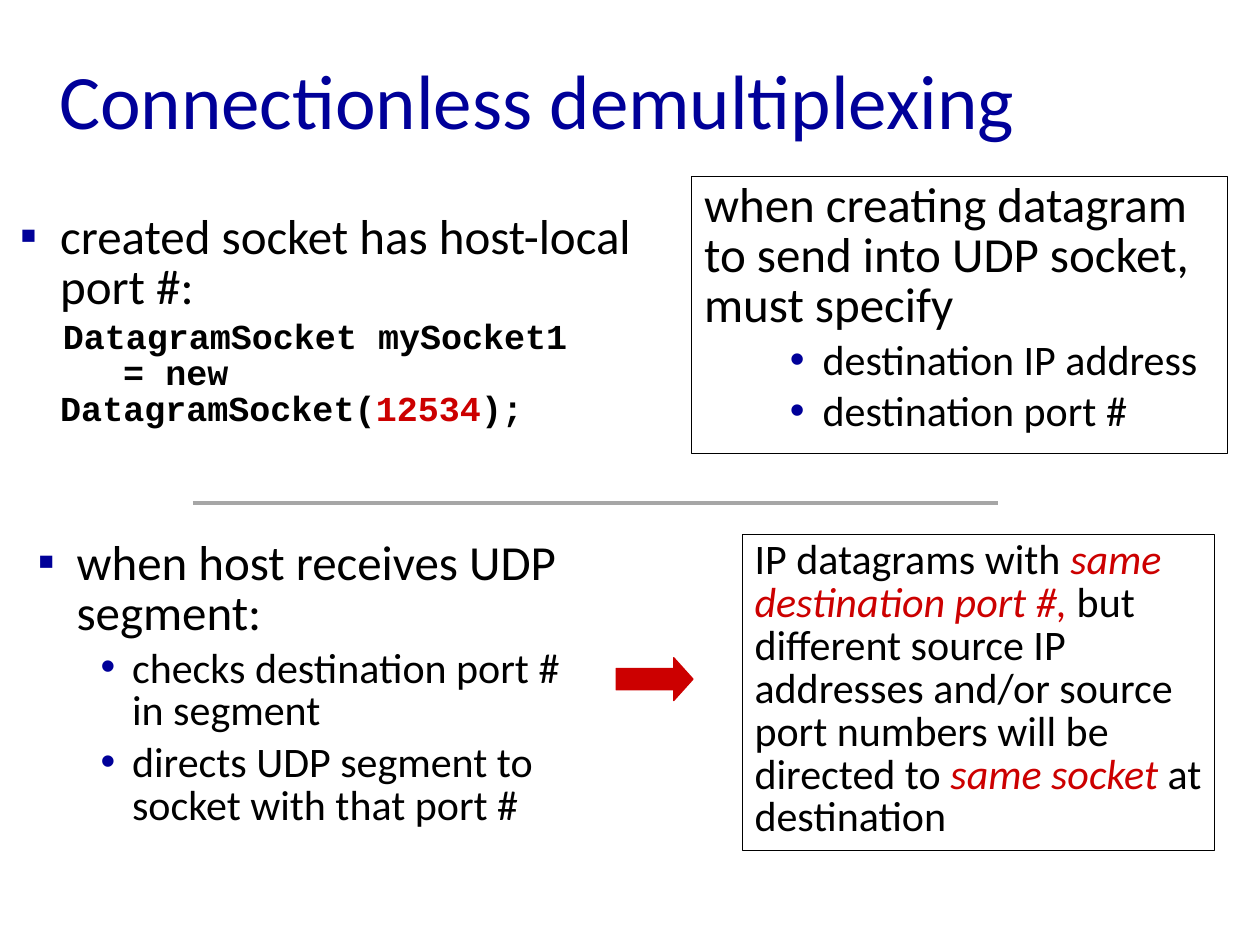
from lxml import etree
from pptx import Presentation
from pptx import util as u
from pptx.dml.color import RGBColor
from pptx.enum import shapes, text
from pptx.oxml.ns import qn

NAVY, RED, BLACK, GRAY = "000099", "CC0000", "000000", "A6A6A6"


def color(hex_value):
    return RGBColor.from_string(hex_value)


class SlideBuilder:
    font = "Calibri"
    line_spacing = 0.85
    space_ratio = 0.2  # space before a paragraph, as a share of its size

    def __init__(self, slide):
        self.slide = slide

    def add_run(self, paragraph, words, size, hue=BLACK, italic=False,
                bold=False, font=None):
        run = paragraph.add_run()
        run.text = words
        run.font.name = font or self.font
        run.font.size = u.Pt(size)
        run.font.bold = bold
        run.font.italic = italic
        run.font.color.rgb = color(hue)

    def title(self, words, left, top, width, height):
        title = self.slide.shapes.title
        title.left, title.top = u.Inches(left), u.Inches(top)
        title.width, title.height = u.Inches(width), u.Inches(height)
        title.text_frame.vertical_anchor = text.MSO_ANCHOR.MIDDLE
        paragraph = title.text_frame.paragraphs[0]
        paragraph.alignment = text.PP_ALIGN.LEFT
        self.add_run(paragraph, words, 44, NAVY)

    def text_area(self, left, top, width, height, framed=False):
        area = self.slide.shapes.add_textbox(
            *map(u.Inches, (left, top, width, height)))
        area.text_frame.word_wrap = True
        area.text_frame.auto_size = text.MSO_AUTO_SIZE.NONE
        if framed:
            area.line.color.rgb = color(BLACK)
            area.line.width = u.Pt(0.75)
        return area.text_frame

    def paragraph(self, frame, runs, size, margin=0, indent=0, bullet=None,
                  level=0, spaced=True, **style):
        """Add a paragraph; runs are (words, colour, italic) tuples or a string."""
        first = frame.paragraphs[0]
        paragraph = frame.add_paragraph() if first.runs else first
        paragraph.level = level
        paragraph.alignment = text.PP_ALIGN.LEFT
        paragraph.line_spacing = self.line_spacing
        paragraph.space_before = u.Pt(size * self.space_ratio if spaced else 0)
        properties = paragraph._p.get_or_add_pPr()
        properties.set("marL", str(u.Inches(margin)))
        properties.set("indent", str(u.Inches(indent)))
        if bullet:
            bullet_color = etree.SubElement(properties, qn("a:buClr"))
            etree.SubElement(bullet_color, qn("a:srgbClr"), val=NAVY)
            etree.SubElement(properties, qn("a:buFont"), typeface="Arial")
            etree.SubElement(properties, qn("a:buChar"), char=bullet)
        else:
            etree.SubElement(properties, qn("a:buNone"))
        for run in [(runs,)] if isinstance(runs, str) else runs:
            self.add_run(paragraph, run[0], size, *run[1:], **style)

    def divider(self, left, right, y):
        line = self.slide.shapes.add_connector(
            shapes.MSO_CONNECTOR.STRAIGHT, *map(u.Inches, (left, y, right, y)))
        line.line.color.rgb = color(GRAY)
        line.line.width = u.Pt(2.25)
        etree.SubElement(line._element.spPr, qn("a:effectLst"))

    def arrow(self, left, top, width, height):
        arrow = self.slide.shapes.add_shape(
            shapes.MSO_SHAPE.RIGHT_ARROW,
            *map(u.Inches, (left, top, width, height)))
        arrow.adjustments[1] = 0.45
        arrow.shadow.inherit = False
        arrow.fill.solid()
        arrow.fill.fore_color.rgb = color(RED)
        arrow.line.color.rgb = color(RED)
        arrow.line.width = u.Pt(0.75)


def main():
    deck = Presentation()
    deck.slide_width, deck.slide_height = u.Inches(10), u.Inches(7.5)
    page = SlideBuilder(deck.slides.add_slide(deck.slide_layouts[5]))
    page.title("Connectionless demultiplexing", 0.37, 0.16, 8.5, 1.25)

    # Creating a socket
    creation = page.text_area(0, 1.65, 5.4, 2.03)
    page.paragraph(creation, "created socket has host-local port #:", 28,
                   0.38, -0.32, "▪")
    code = {"font": "Courier New", "bold": True}
    page.paragraph(creation, "DatagramSocket mySocket1", 20, 0.38, 0.02, **code)
    page.paragraph(creation, [("= new DatagramSocket(",), ("12534", RED), (");",)],
                   20, 0.38, 0.5, spaced=False, **code)

    # Receiving a segment
    receipt = page.text_area(0.2, 4.24, 4.5, 2.59)
    page.paragraph(receipt, "when host receives UDP segment:", 28,
                   0.31, -0.31, "▪")
    for step in ("checks destination port # in segment",
                 "directs UDP segment to socket with that port #"):
        page.paragraph(receipt, step, 24, 0.75, -0.25, "•", level=1)

    # Sending a datagram
    sending = page.text_area(5.49, 1.4, 4.25, 2.2, framed=True)
    page.paragraph(sending, "when creating datagram to send into UDP socket, "
                            "must specify", 28)
    for field in ("destination IP address", "destination port #"):
        page.paragraph(sending, field, 24, 0.94, -0.26, "•", level=1)

    # Consequence for delivery
    delivery = page.text_area(5.89, 4.24, 3.75, 2.51, framed=True)
    page.paragraph(delivery, [
        ("IP datagrams with ",),
        ("same destination port #,", RED, True),
        (" but different source IP addresses and/or source port numbers "
         "will be directed to ",),
        ("same socket ", RED, True),
        ("at destination",),
    ], 24)

    # Divider and arrow
    page.divider(1.53, 7.92, 3.99)
    page.arrow(4.89, 5.22, 0.61, 0.34)

    deck.save("out.pptx")


if __name__ == "__main__":
    main()
